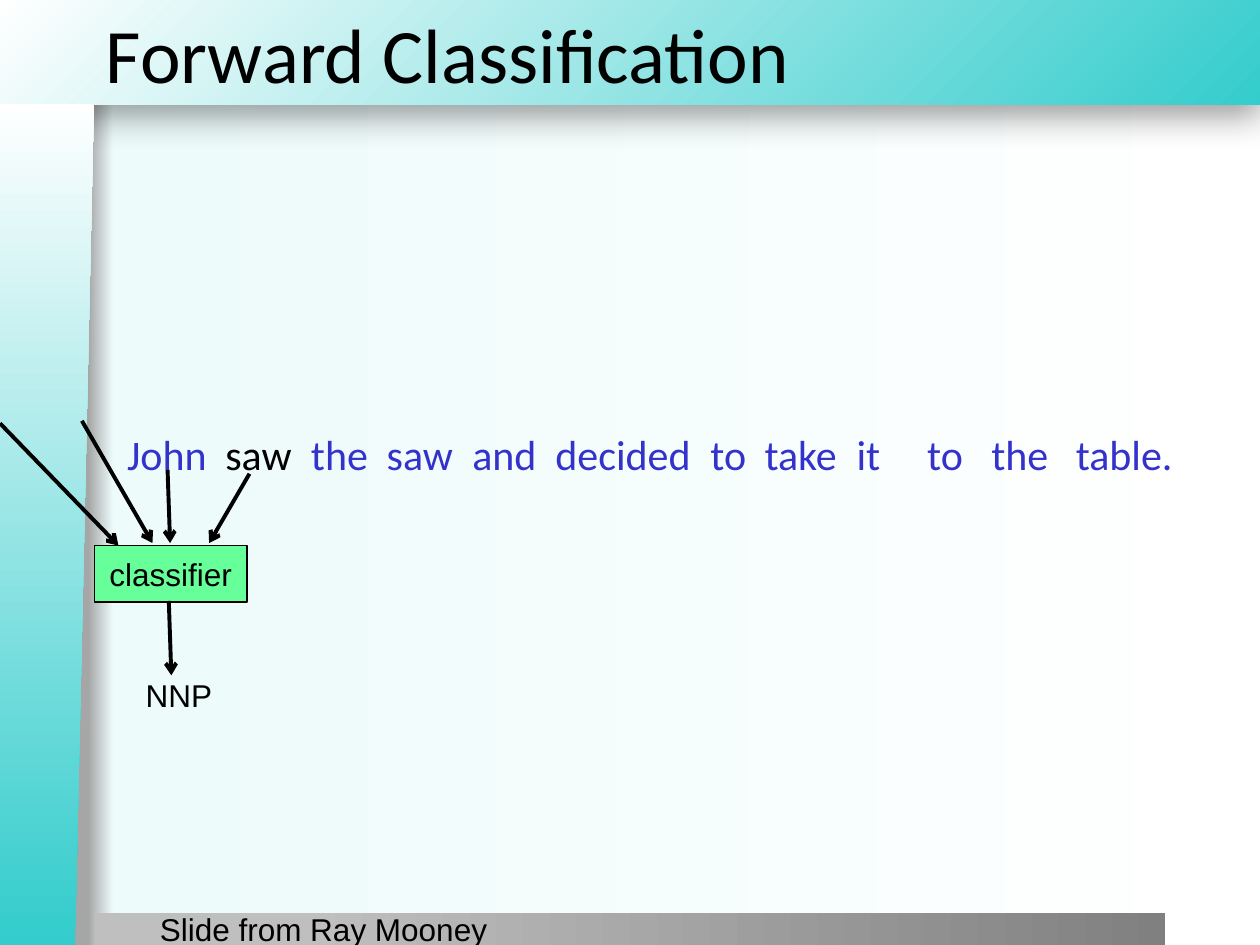
from lxml import etree
from pptx import Presentation
from pptx.dml.color import RGBColor
from pptx.enum import shapes, text
from pptx.oxml import ns
from pptx.util import Inches, Pt

BLACK, BLUE, TEAL, WHITE = "000000", "3333CC", "34CCCC", "FFFFFF"

# Words of the sentence, with each word's distance from the first
SENTENCE = [("John", 0), ("saw", 0.78), ("the", 1.46), ("saw", 2.06),
            ("and", 2.74), ("decided", 3.4), ("to", 4.63), ("take", 5.06),
            ("it", 5.79), ("to", 6.35), ("the", 6.86), ("table.", 7.53)]
CURRENT_WORD = 1

# Start and end of each arrow
ARROWS = [((0, 3.36), (0.94, 4.33)), ((0.65, 3.34), (1.21, 4.31)),
          ((1.33, 3.73), (1.35, 4.31)), ((1.98, 3.76), (1.66, 4.31)),
          ((1.34, 4.77), (1.36, 5.36))]


def color(value):
    return RGBColor.from_string(value)


def child(parent, tag, **attributes):
    return etree.SubElement(parent, ns.qn(tag), attributes)


def set_gradient(fill, owner, stops, to_corner=False):
    """Left-to-right gradient, or one spreading from the lower right corner."""
    fill.gradient()
    grad = owner.find(ns.qn("a:gradFill"))
    for part in list(grad):
        grad.remove(part)
    grad.set("rotWithShape", "1")
    stop_list = child(grad, "a:gsLst")
    for position, value in stops:
        stop = child(stop_list, "a:gs", pos=str(position * 1000))
        child(stop, "a:srgbClr", val=value)
    if to_corner:
        spread = child(grad, "a:path", path="circle")
        child(spread, "a:fillToRect", l="100000", t="100000")
    else:
        child(grad, "a:lin", ang="0", scaled="0")


def add_block(page, kind, area):
    block = page.shapes.add_shape(kind, *map(Inches, area))
    block.shadow.inherit = False
    block.line.fill.background()
    return block


def add_band(page, kind, area, stops, to_corner=False):
    band = add_block(page, kind, area)
    set_gradient(band.fill, band.element.spPr, stops, to_corner)
    return band


def add_shadow(shape):
    effects = shape.element.spPr.find(ns.qn("a:effectLst"))
    shadow = child(effects, "a:outerShdw", blurRad=str(Pt(20)),
                   dist=str(Pt(6)), dir="5400000", algn="t", rotWithShape="0")
    tint = child(shadow, "a:srgbClr", val=BLACK)
    child(tint, "a:alpha", val="40000")


def add_span(para, words, size, font="Arial", value=BLACK):
    span = para.add_run()
    span.text = words
    span.font.size = Pt(size)
    span.font.name = font
    span.font.color.rgb = color(value)


def add_text(page, area):
    box = page.shapes.add_textbox(*map(Inches, area))
    box.text_frame.word_wrap = True
    return box.text_frame.paragraphs[0]


def add_arrow(page, start, end):
    arrow = page.shapes.add_connector(
        shapes.MSO_CONNECTOR.STRAIGHT, *map(Inches, start + end))
    arrow.line.color.rgb = color(BLACK)
    arrow.line.width = Pt(2.25)
    child(arrow.line._get_or_add_ln(), "a:tailEnd", type="arrow")
    child(arrow.element.spPr, "a:effectLst")


def add_backdrop(page):
    fill = page.background.fill
    fill.solid()
    set_gradient(fill, page.element.find(".//" + ns.qn("p:bgPr")),
                 [(7, "A6A6A6"), (9, "EDFBFB"), (100, WHITE)])
    rect = shapes.MSO_SHAPE.RECTANGLE
    header = add_band(page, rect, (-0.01, 0, 10.01, 0.83),
                      [(0, TEAL), (100, WHITE)], to_corner=True)
    add_shadow(header)
    add_band(page, rect, (0.75, 7.25, 8.5, 0.26),
             [(20, "BFBFBF"), (100, "808080")])
    sidebar = add_band(page, shapes.MSO_SHAPE.FLOWCHART_MANUAL_INPUT,
                       (-2.97, 3.79, 6.68, 0.75), [(1, TEAL), (100, WHITE)])
    sidebar.rotation = 270
    sidebar.element.spPr.find(ns.qn("a:xfrm")).set("flipV", "1")


def add_title(page):
    title = page.shapes.title
    title.left, title.top = Inches(0.74), Inches(-0.08)
    title.width, title.height = Inches(9.26), Inches(1)
    title.text_frame.vertical_anchor = text.MSO_ANCHOR.MIDDLE
    para = title.text_frame.paragraphs[0]
    para.alignment = text.PP_ALIGN.LEFT
    add_span(para, "Forward Classification", 44, "Calibri")
    # Bring the title in front of the header band
    page.shapes.element.append(title.element)


def add_sentence(page):
    para = add_text(page, (0.91, 3.35, 8.72, 0.5))
    tabs = child(para._p.get_or_add_pPr(), "a:tabLst")
    for index, (word, offset) in enumerate(SENTENCE):
        if index:
            child(tabs, "a:tab", pos=str(Inches(offset)), algn="l")
        value = BLACK if index == CURRENT_WORD else BLUE
        add_span(para, "\t" + word if index else word, 24, "Calibri", value)


def add_classifier(page):
    box = add_block(page, shapes.MSO_SHAPE.RECTANGLE, (0.75, 4.33, 1.21, 0.45))
    box.fill.solid()
    box.fill.fore_color.rgb = color("66FF99")
    box.line.color.rgb = color(BLACK)
    box.line.width = Pt(1)
    box.text_frame.word_wrap = False
    para = box.text_frame.paragraphs[0]
    para.alignment = text.PP_ALIGN.CENTER
    add_span(para, "classifier", 18)


def main():
    deck = Presentation()
    deck.slide_width, deck.slide_height = Inches(10), Inches(7.5)
    page = deck.slides.add_slide(deck.slide_layouts[5])

    add_backdrop(page)
    add_title(page)
    add_sentence(page)

    # Classifier with its inputs and its output tag
    add_classifier(page)
    for start, end in ARROWS:
        add_arrow(page, start, end)
    tag = add_text(page, (1, 5.32, 0.84, 0.43))
    tag.alignment = text.PP_ALIGN.CENTER
    add_span(tag, "NNP", 18)

    # Source note
    add_span(add_text(page, (1.17, 7.17, 3.42, 0.25)),
             "Slide from Ray Mooney", 18)
    deck.save("out.pptx")


main()
